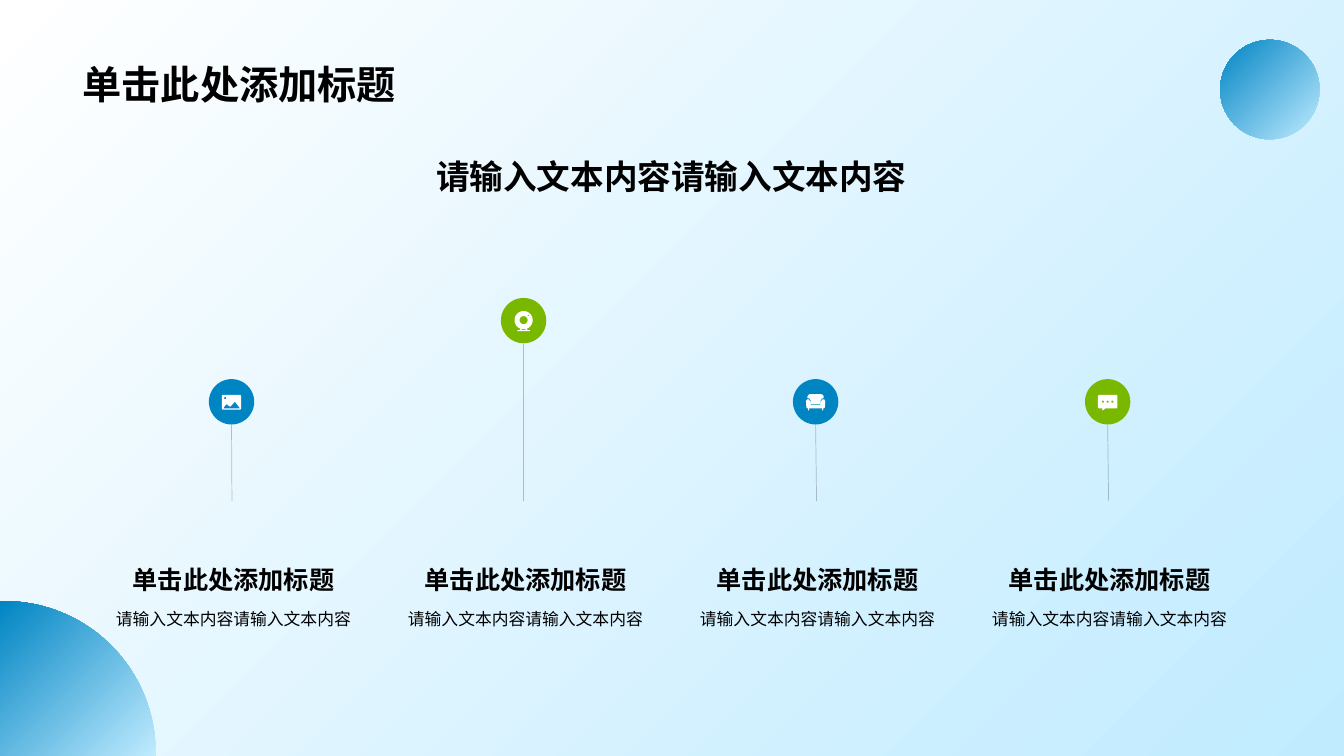
from dataclasses import dataclass
from math import cos, pi, sin

from lxml.etree import SubElement
from pptx import Presentation
from pptx.dml.color import RGBColor as RGB
from pptx.enum.shapes import MSO_CONNECTOR as CONNECTOR, MSO_SHAPE as SHAPE
from pptx.enum.text import MSO_ANCHOR as ANCHOR, MSO_AUTO_SIZE as AUTO, PP_ALIGN as ALIGN
from pptx.oxml.ns import qn
from pptx.util import Pt


@dataclass(frozen=True)
class Theme:
    """Colours and type of the slide."""
    font: str = "Arial"
    ink: RGB = RGB(0, 0, 0)
    white: RGB = RGB(0xFF, 0xFF, 0xFF)
    pale: RGB = RGB(0xC0, 0xEB, 0xFF)
    blue: RGB = RGB(0x00, 0x85, 0xC3)
    green: RGB = RGB(0x7A, 0xB8, 0x00)
    stem: RGB = RGB(0x77, 0x84, 0x95)
    title: int = 28
    subtitle: int = 24
    heading: int = 18
    body: int = 12


T = Theme()
HEADING = "单击此处添加标题"
BODY = "请输入文本内容请输入文本内容"
FIRST_X, PITCH, COLUMN_W = 66.8, 208.6, 200
DISC = 32.4
HEADING_Y, BODY_Y, BLOCK_H, STEM_Y = 374.4, 428.4, 54, 358


def arc(cx, cy, r, start=0, sweep=2 * pi, n=32):
    """Return points along a circular arc."""
    angles = [start + sweep * i / n for i in range(n + 1)]
    return [(cx + r * cos(a), cy + r * sin(a)) for a in angles]


def mirrored(half):
    """Complete a right-hand outline with its reflection."""
    return half + [(-x, y) for x, y in reversed(half)]


def photo_icon():
    """Return the outlines of a framed landscape."""
    frame = mirrored([(6.3, -4.9), (6.9, -4.3), (6.9, 5), (6.3, 5.6)])
    hills = [(-6, 4.7), (-3.7, 1.7), (-1, 3.6), (2.4, 0), (6, 4.7)]
    return [frame, hills, arc(-4.6, -2.6, 0.8)]


def webcam_icon():
    """Return the outlines of a camera on its stand."""
    leg = [(1.3, 6.2), (2.2, 5.9), (2.9, 6.9), (1.9, 6.9)]
    base = mirrored([(4.4, 6.9), (4.4, 7.5)])
    return [arc(0, -0.3, 6.5), arc(0, -0.3, 2.9), arc(3.4, -3.6, 0.5),
            leg, [(-x, y) for x, y in leg], base]


def sofa_icon():
    """Return the outlines of a sofa."""
    back = mirrored([(4, -5.4), (5.3, -4.9), (5.8, -3.6), (5.8, -2.7),
                     (4.4, -2.2), (3.6, -1), (3.4, 1.8)])
    seat = mirrored([(3.4, 2.5), (4, -0.4), (4.8, -1.6), (6.1, -1.8), (6.9, -0.4),
                     (6.6, 4), (6.1, 4.7), (5.4, 4.7), (5.4, 6.1), (4.7, 6.1), (4.7, 4.7)])
    return [back, seat]


def chat_icon():
    """Return the outlines of a speech bubble with three dots."""
    bubble = [(-6.3, -4.9), (6.3, -4.9), (6.9, -4.3), (6.9, 4.2), (6.3, 4.7), (-1.6, 4.7),
              (-3.8, 6.3), (-3.8, 4.7), (-6.3, 4.7), (-6.9, 4.2), (-6.9, -4.3)]
    return [bubble] + [arc(x, -0.1, 0.8) for x in (-3.4, 0, 3.4)]


def fill_gradient(fill, start, end):
    """Apply a two-stop diagonal gradient."""
    fill.gradient()
    fill.gradient_angle = 135
    for stop, color in zip(fill.gradient_stops, (start, end)):
        stop.color.rgb = color


def finish(sp, color=None):
    """Remove line and shadow, then fill with a colour or the blue gradient."""
    sp.shadow.inherit = False
    sp.line.fill.background()
    if color is None:
        fill_gradient(sp.fill, T.pale, T.blue)
    else:
        sp.fill.solid()
        sp.fill.fore_color.rgb = color


def add_disc(s, cx, cy, size, color=None):
    """Add a circle around a centre."""
    sp = s.shapes.add_shape(SHAPE.OVAL, Pt(cx - size / 2), Pt(cy - size / 2), Pt(size), Pt(size))
    finish(sp, color)


def add_outline(s, contours, cx=0, cy=0, color=None):
    """Add one freeform made of closed contours."""
    paths = [[(Pt(cx + x), Pt(cy + y)) for x, y in c] for c in contours]
    fb = s.shapes.build_freeform(*paths[0][0])
    fb.add_line_segments(paths[0][1:])
    for points in paths[1:]:
        fb.move_to(*points[0])
        fb.add_line_segments(points[1:])
    finish(fb.convert_to_shape(), color)


def add_stem(s, x, top, lean):
    """Add the thin translucent line below a disc."""
    cxn = s.shapes.add_connector(CONNECTOR.STRAIGHT, Pt(x + lean), Pt(STEM_Y), Pt(x), Pt(top))
    cxn.line.width = Pt(0.5)
    cxn.line.color.rgb = T.stem
    clr = cxn.line._get_or_add_ln().find(".//" + qn("a:srgbClr"))
    SubElement(clr, qn("a:alpha"), val="50000")
    SubElement(cxn._element.spPr, qn("a:effectLst"))


def write(sp, text, size, bold=True, align=ALIGN.CENTER, anchor=ANCHOR.TOP, spacing=None):
    """Write one formatted run into a shape."""
    tf = sp.text_frame
    tf.word_wrap = True
    tf.auto_size = AUTO.NONE
    tf.vertical_anchor = anchor
    p = tf.paragraphs[0]
    p.alignment = align
    p.line_spacing = spacing
    r = p.add_run()
    r.text = text
    r.font.name, r.font.size, r.font.bold = T.font, Pt(size), bold
    r.font.color.rgb = T.ink


def add_text(s, x, y, w, h, text, size, **style):
    """Add a text box."""
    write(s.shapes.add_textbox(Pt(x), Pt(y), Pt(w), Pt(h)), text, size, **style)


def add_column(s, index, cy, color, icon, lean):
    """Add a stem, disc, icon, heading and body text."""
    x = FIRST_X + PITCH * index
    cx = x + COLUMN_W / 2 - 1.4
    add_stem(s, cx, cy + DISC / 2, lean)
    add_disc(s, cx, cy, DISC, color)
    add_outline(s, icon, cx, cy, T.white)
    add_text(s, x, HEADING_Y, COLUMN_W, BLOCK_H, HEADING, T.heading, anchor=ANCHOR.BOTTOM)
    add_text(s, x, BODY_Y, COLUMN_W, BLOCK_H, BODY, T.body, bold=False, spacing=1.2)


def main():
    """Build and save the slide."""
    prs = Presentation()
    prs.slide_width, prs.slide_height = Pt(960), Pt(540)
    s = prs.slides.add_slide(prs.slide_layouts[5])
    fill_gradient(s.background.fill, T.pale, T.white)
    add_outline(s, [arc(2.9, 537.8, 108.4, -pi / 2, pi / 2) + [(111.3, 540), (0, 540), (0, 429.4)]])
    add_disc(s, 907, 64, 71)
    title = s.shapes.title
    title.left, title.top, title.width, title.height = Pt(51.8), Pt(10), Pt(855.4), Pt(70.6)
    write(title, HEADING, T.title, align=ALIGN.LEFT, anchor=ANCHOR.BOTTOM)
    add_text(s, 51.8, 108, 855.4, 57.6, BODY, T.subtitle)
    columns = [
        (287, T.blue, photo_icon(), 0.3),
        (229, T.green, webcam_icon(), 0),
        (287, T.blue, sofa_icon(), 0.7),
        (287, T.green, chat_icon(), 0.7),
    ]
    for i, column in enumerate(columns):
        add_column(s, i, *column)
    prs.save("out.pptx")


if __name__ == "__main__":
    main()
